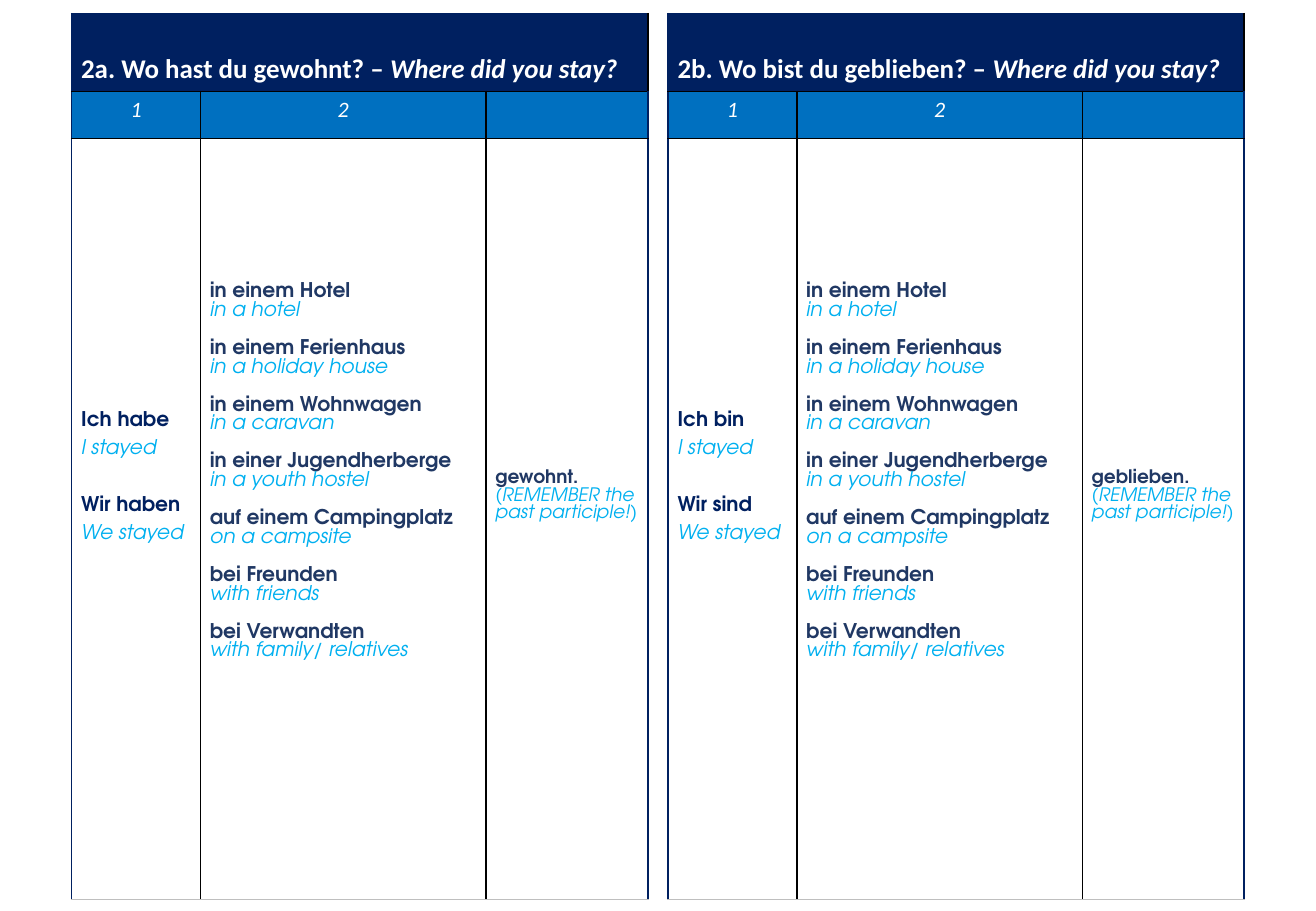
from lxml.etree import SubElement
from pptx import Presentation
from pptx.dml.color import RGBColor
from pptx.enum.text import MSO_ANCHOR, PP_ALIGN
from pptx.oxml.ns import qn
from pptx.util import Pt

NAVY = RGBColor(0x00, 0x20, 0x60)
BLUE = RGBColor(0x00, 0x70, 0xC0)
SKY = RGBColor(0x00, 0xB0, 0xF0)
SLATE = RGBColor(0x20, 0x38, 0x64)
WHITE = RGBColor(0xFF, 0xFF, 0xFF)
BLACK = RGBColor(0x00, 0x00, 0x00)
GREY = RGBColor(0xBF, 0xBF, 0xBF)

# Text formats
BODY = {"name": "TeX Gyre Adventor", "size": Pt(12)}
SMALL = BODY | {"size": Pt(11)}
GERMAN = {"bold": True, "italic": False}
ENGLISH = {"bold": False, "italic": True}
TITLE = {"name": "Calibri", "size": Pt(16), "bold": True, "color": WHITE}
NUMBER = {"name": "Calibri", "size": Pt(13), "bold": False, "italic": True, "color": WHITE}

COLUMNS = (76.3, 169.2, 96)
ROWS = (46, 28, 451)

PLACES = [
    ("in einem Hotel", "in a hotel"),
    ("in einem Ferienhaus", "in a holiday house"),
    ("in einem Wohnwagen", "in a caravan"),
    ("in einer Jugendherberge", "in a youth hostel"),
    ("auf einem Campingplatz", "on a campsite"),
    ("bei Freunden", "with friends"),
    ("bei Verwandten", "with family/ relatives"),
]
REMINDER = "(REMEMBER the past participle!)"


class PhraseSheet:
    """Holds the current page and draws its tables."""

    def __init__(self, page):
        self.page = page

    def table(self, left, top):
        frame = self.page.shapes.add_table(
            len(ROWS), len(COLUMNS), Pt(left), Pt(top), Pt(sum(COLUMNS)), Pt(sum(ROWS)))
        table = frame.table
        table.first_row = table.horz_banding = False
        for column, width in zip(table.columns, COLUMNS):
            column.width = Pt(width)
        for row, height in zip(table.rows, ROWS):
            row.height = Pt(height)
        for r, fill in enumerate((NAVY, BLUE, WHITE)):
            for c in range(len(COLUMNS)):
                self.borders(table.cell(r, c), r, c)
                self.cell(table.cell(r, c), fill)
        table.cell(0, 0).merge(table.cell(0, len(COLUMNS) - 1))
        return table

    def borders(self, cell, row, column):
        colors = {
            "a:lnL": NAVY if column == 0 else BLACK,
            "a:lnR": NAVY if column == len(COLUMNS) - 1 else BLACK,
            "a:lnT": NAVY if row == 0 else BLACK,
            "a:lnB": GREY if row == len(ROWS) - 1 else BLACK,
        }
        properties = cell._tc.get_or_add_tcPr()
        for tag, color in colors.items():
            line = SubElement(properties, qn(tag), w=str(Pt(1)))
            SubElement(SubElement(line, qn("a:solidFill")), qn("a:srgbClr"), val=str(color))

    def cell(self, cell, fill):
        cell.fill.solid()
        cell.fill.fore_color.rgb = fill
        self.margins(cell, 2.9, 2.9)

    def margins(self, cell, top, bottom, anchor=MSO_ANCHOR.TOP):
        values = {"margin_left": Pt(5.6), "margin_right": Pt(5.6), "margin_top": Pt(top),
                  "margin_bottom": Pt(bottom), "vertical_anchor": anchor}
        for name, value in values.items():
            setattr(cell, name, value)

    def paragraphs(self, cell, lines, **para_format):
        """Each line is (space before, [(text, format), ...])."""
        frame = cell.text_frame
        for index, (gap, spans) in enumerate(lines):
            para = frame.add_paragraph() if index else frame.paragraphs[0]
            for name, value in (para_format | {"space_before": Pt(gap)}).items():
                setattr(para, name, value)
            for text, text_format in spans:
                self.span(para, text, text_format)

    def span(self, para, text, text_format):
        span = para.add_run()
        span.text = text
        for name, value in text_format.items():
            if name == "color":
                span.font.color.rgb = value
            else:
                setattr(span.font, name, value)

    def pairs(self, cell, phrases, base, color, gap, bottom, **para_format):
        """German phrases, each with its English meaning below."""
        lines = []
        for index, (german, english) in enumerate(phrases):
            lines.append((gap if index else 0, [(german, base | GERMAN | {"color": color})]))
            lines.append((0, [(english, base | ENGLISH | {"color": SKY})]))
        self.margins(cell, 2.9, bottom, MSO_ANCHOR.MIDDLE)
        self.paragraphs(cell, lines, **para_format)

    def phrase_table(self, left, question, subjects, participle):
        table = self.table(left, 8)
        # Question
        title = table.cell(0, 0)
        self.margins(title, 23, 3.6, MSO_ANCHOR.MIDDLE)
        self.paragraphs(title, [(0, [
            (question, TITLE), ("Where did you stay?", TITLE | {"italic": True})])])
        # Column numbers
        for column in range(2):
            self.paragraphs(table.cell(1, column), [(0, [(str(column + 1), NUMBER)])],
                            alignment=PP_ALIGN.CENTER)
        # Sentence parts
        self.pairs(table.cell(2, 0), subjects, BODY, NAVY, 17, 58, line_spacing=1.5)
        self.pairs(table.cell(2, 1), PLACES, BODY, SLATE, 11.3, 59)
        self.pairs(table.cell(2, 2), [(participle, REMINDER)], SMALL, SLATE, 0, 30)


def main():
    deck = Presentation()
    deck.slide_width, deck.slide_height = Pt(780), Pt(540)
    sheet = PhraseSheet(deck.slides.add_slide(deck.slide_layouts[6]))
    sheet.phrase_table(42.5, "2a. Wo hast du gewohnt? – ",
                       [("Ich habe", "I stayed"), ("Wir haben", "We stayed")], "gewohnt.")
    sheet.phrase_table(396, "2b. Wo bist du geblieben? – ",
                       [("Ich bin", "I stayed"), ("Wir sind", "We stayed")], "geblieben.")
    deck.save("out.pptx")


if __name__ == "__main__":
    main()
